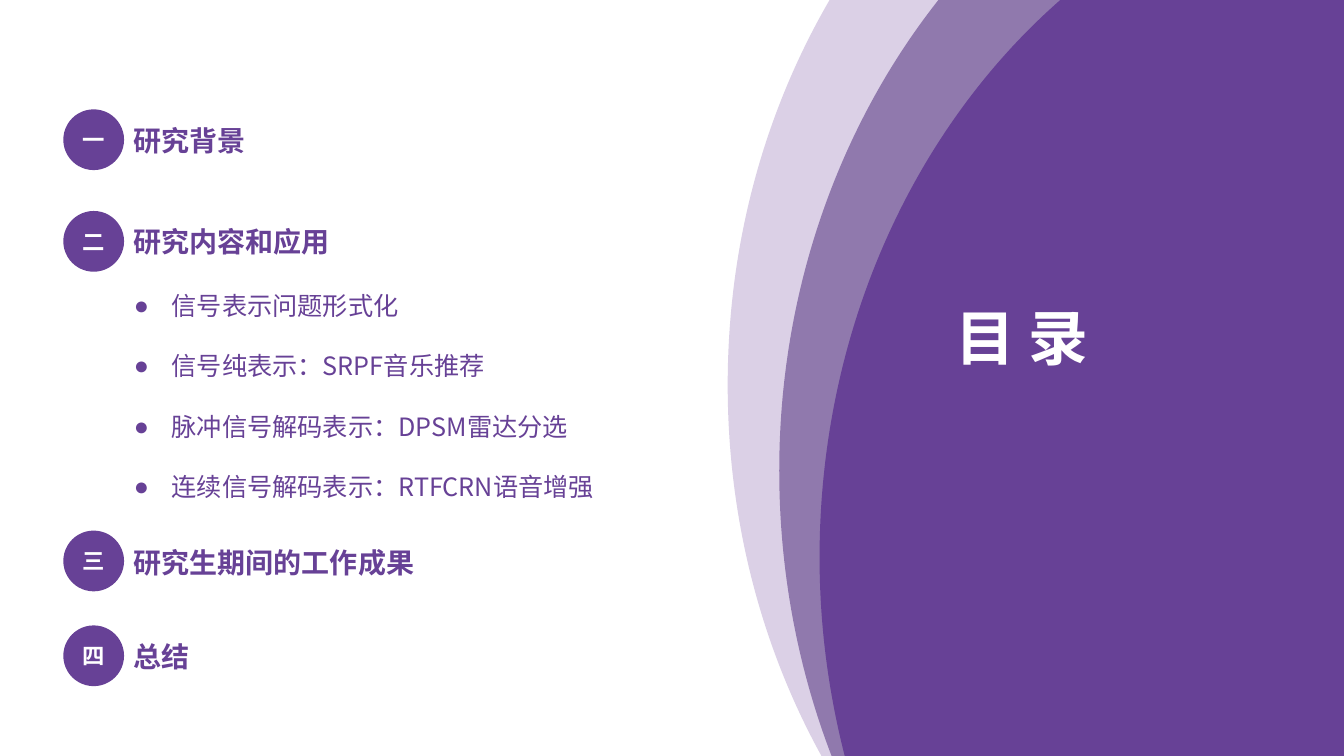
from lxml import etree
from pptx import Presentation
from pptx.dml.color import RGBColor
from pptx.enum import shapes, text
from pptx.oxml import ns
from pptx.util import Pt

PURPLE = RGBColor(0x67, 0x41, 0x96)
MAUVE = RGBColor(0x90, 0x79, 0xAD)
LILAC = RGBColor(0xDB, 0xD0, 0xE6)
WHITE = RGBColor(0xFF, 0xFF, 0xFF)
CJK = "Noto Sans CJK SC"
WIDTH, HEIGHT = 960, 540

prs = Presentation()
prs.slide_width, prs.slide_height = Pt(WIDTH), Pt(HEIGHT)
slide = prs.slides.add_slide(prs.slide_layouts[6])


def paint(shape, color):
    shape.shadow.inherit = False
    shape.fill.solid()
    shape.fill.fore_color.rgb = color
    shape.line.fill.background()


def style(paragraph, size, color, bold=True, name=CJK):
    font = paragraph.font
    font.size, font.bold, font.name = Pt(size), bold, name
    font.color.rgb = color


# Curved bands on the right, back to front: upper and lower curve of the left edge
bands = [
    (LILAC, [(592.6, 0), (546.5, 79.2), (519.8, 173.5), (519.8, 275),
             (519.8, 372.2), (544.3, 463), (586.8, HEIGHT)]),
    (MAUVE, [(670.3, 0), (599.8, 89.3), (556.6, 207.4), (556.6, 336.2),
             (556.6, 409), (570.2, 478.1), (594, HEIGHT)]),
    (PURPLE, [(757.4, 0), (653, 91.4), (585.4, 236.2), (585.4, 398.2),
              (585.4, 447.1), (591.8, 494.6), (603.4, HEIGHT)]),
]
for color, edge in bands:
    points = [(Pt(x), Pt(y)) for x, y in edge + [(WIDTH, HEIGHT), (WIDTH, 0)]]
    outline = slide.shapes.build_freeform(*points[0])
    outline.add_line_segments(points[1:])
    band = outline.convert_to_shape()
    paint(band, color)
    # Each three segments of the left edge become one cubic curve
    segments = list(band._element.iter(ns.qn("a:lnTo")))
    for first in (0, 3):
        curve = etree.Element(ns.qn("a:cubicBezTo"))
        segments[first].addprevious(curve)
        for segment in segments[first:first + 3]:
            curve.append(segment[0])
            segment.getparent().remove(segment)

# Slide title
title = slide.shapes.add_textbox(Pt(675.4), Pt(211), Pt(112.3), Pt(59)).text_frame
title.word_wrap = False
title.text = "目 录"
title.paragraphs[0].alignment = text.PP_ALIGN.JUSTIFY
style(title.paragraphs[0], 42.7, WHITE, name="Arial")

# Numbered sections
sections = [
    ("一", "研究背景", 78.1, 84.8, 95),
    ("二", "研究内容和应用", 150.7, 156.8, 156.2),
    ("三", "研究生期间的工作成果", 379, 386.2, 216.7),
    ("四", "总结", 446.7, 453.4, 54.7),
]
for number, heading, badge_top, heading_top, width in sections:
    badge = slide.shapes.add_shape(shapes.MSO_SHAPE.OVAL,
                                   Pt(45.2), Pt(badge_top), Pt(43.4), Pt(43.4))
    paint(badge, PURPLE)
    badge.text_frame.text = number
    badge.text_frame.vertical_anchor = text.MSO_ANCHOR.MIDDLE
    badge.text_frame.paragraphs[0].alignment = text.PP_ALIGN.CENTER
    style(badge.text_frame.paragraphs[0], 16, WHITE)

    label = slide.shapes.add_textbox(Pt(88.4), Pt(heading_top), Pt(width), Pt(31.7)).text_frame
    label.word_wrap = False
    label.text = heading
    style(label.paragraphs[0], 20, PURPLE)

# Topics of the second section
topics = slide.shapes.add_textbox(Pt(88.6), Pt(203.8), Pt(348.5), Pt(159.8)).text_frame
topics.word_wrap = True
topics.text = "\n".join([
    "信号表示问题形式化",
    "信号纯表示：SRPF音乐推荐",
    "脉冲信号解码表示：DPSM雷达分选",
    "连续信号解码表示：RTFCRN语音增强",
])
for i, topic in enumerate(topics.paragraphs):
    if i:
        topic.space_before = Pt(21.6)
    properties = topic._p.get_or_add_pPr()
    properties.set("marL", str(Pt(27)))
    properties.set("indent", str(-Pt(27)))
    etree.SubElement(properties, ns.qn("a:buFont"), typeface="Arial")
    etree.SubElement(properties, ns.qn("a:buChar"), char="●")
    style(topic, 18, PURPLE, bold=False)

prs.save("out.pptx")
